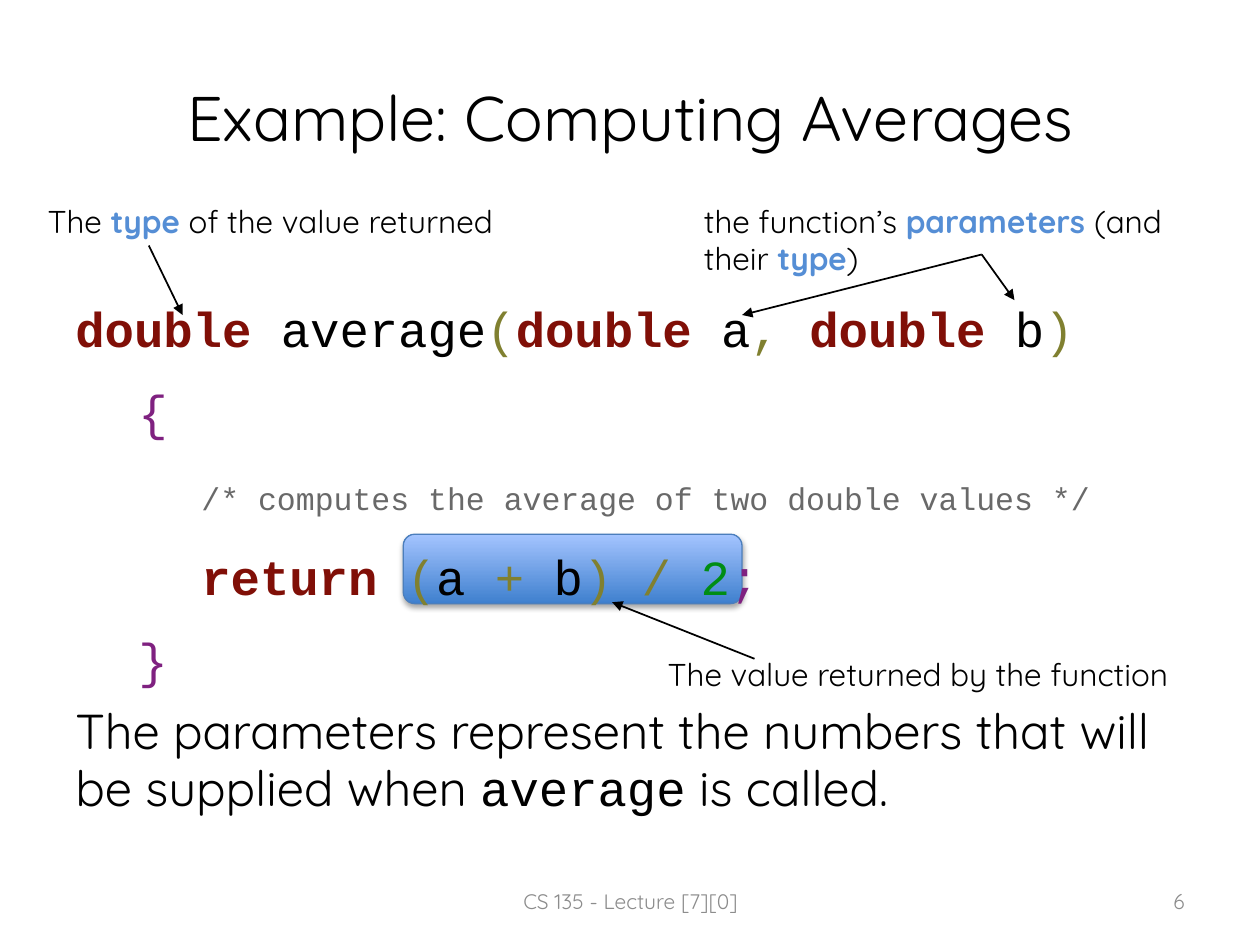
import pptx
import pptx.util
import pptx.oxml
import pptx.oxml.ns
import pptx.dml.color
import pptx.enum.text
import pptx.enum.shapes

Cm, Pt = pptx.util.Cm, pptx.util.Pt
RGB = pptx.dml.color.RGBColor
Align = pptx.enum.text.PP_ALIGN
Anchor = pptx.enum.text.MSO_ANCHOR
Fit = pptx.enum.text.MSO_AUTO_SIZE
Kind = pptx.enum.shapes.MSO_SHAPE
Line = pptx.enum.shapes.MSO_CONNECTOR
NS = pptx.oxml.ns.nsdecls("a")

BLACK = RGB(0x00, 0x00, 0x00)
RED = RGB(0x80, 0x0F, 0x07)
OLIVE = RGB(0x80, 0x80, 0x30)
PURPLE = RGB(0x7F, 0x21, 0x80)
GREEN = RGB(0x00, 0x8D, 0x14)
GREY = RGB(0x69, 0x69, 0x69)
PALE = RGB(0x8C, 0x8C, 0x8C)
BLUE = RGB(0x55, 0x8E, 0xD5)
EDGE = RGB(0x4B, 0x7E, 0xBC)
DARK = RGB(0x3F, 0x80, 0xCE)
LIGHT = RGB(0xA4, 0xC4, 0xFF)

SANS, MONO = "Quicksand", "Courier New"
BOLD = (RED, BLUE)  # colours that mark bold words


class Deck:
    def __init__(self):
        self.prs = pptx.Presentation()
        self.prs.slide_width, self.prs.slide_height = Cm(25.4), Cm(19.05)
        self.slide = self.prs.slides.add_slide(self.prs.slide_layouts[5])

    def run(self, para, text, color=BLACK, size=18, font=SANS):
        run = para.add_run()
        run.text = text
        run.font.name, run.font.size = font, Pt(size)
        run.font.color.rgb, run.font.bold = color, color in BOLD

    def title(self, text, x, y, w, h):
        box = self.slide.shapes.title
        box.left, box.top, box.width, box.height = map(Cm, (x, y, w, h))
        box.text_frame.vertical_anchor = Anchor.MIDDLE
        para = box.text_frame.paragraphs[0]
        para.alignment = Align.CENTER
        self.run(para, text, size=36)

    def frame(self, x, y, w, h, wrap=True):
        box = self.slide.shapes.add_textbox(*map(Cm, (x, y, w, h)))
        box.text_frame.word_wrap = wrap
        return box.text_frame

    def label(self, x, y, w, h, runs, wrap=True):
        frame = self.frame(x, y, w, h, wrap)
        frame.auto_size = Fit.SHAPE_TO_FIT_TEXT
        for text, color in runs:
            self.run(frame.paragraphs[0], text, color)

    def foot(self, x, w, text, align):
        frame = self.frame(x, 17.66, w, 1.01)
        frame.vertical_anchor = Anchor.MIDDLE
        frame.paragraphs[0].alignment = align
        self.run(frame.paragraphs[0], text, PALE, 12)

    def body(self, x, y, w, h, rows):
        frame = self.frame(x, y, w, h)
        for i, (depth, before, after, runs) in enumerate(rows):
            para = frame.add_paragraph() if i else frame.paragraphs[0]
            para.space_before, para.space_after = Pt(before), Pt(after)
            props = para._p.get_or_add_pPr()
            props.set("marL", str(Cm(1.27 * depth)))
            props.set("indent", "0")
            for text, color, size, font in runs:
                self.run(para, text, color, size, font)
        para.line_spacing = 0.96

    def panel(self, x, y, w, h):
        box = self.slide.shapes.add_shape(
            Kind.ROUNDED_RECTANGLE, *map(Cm, (x, y, w, h)))
        box.fill.gradient()
        box.fill.gradient_angle = 90
        for stop, color in zip(box.fill.gradient_stops, (DARK, LIGHT)):
            stop.color.rgb = color
        for stop, place in zip(box.fill.gradient_stops, (0, 1)):
            stop.position = place
        box.line.color.rgb, box.line.width = EDGE, Pt(0.75)
        box._element.spPr.append(pptx.oxml.parse_xml(
            f'<a:effectLst {NS}><a:outerShdw blurRad="{Pt(3.1)}" '
            f'dist="{Pt(1.8)}" dir="5400000" rotWithShape="0">'
            '<a:srgbClr val="000000"><a:alpha val="35000"/></a:srgbClr>'
            '</a:outerShdw></a:effectLst>'))

    def arrow(self, start, end):
        line = self.slide.shapes.add_connector(
            Line.STRAIGHT, *map(Cm, start + end))
        line.line.color.rgb, line.line.width = BLACK, Pt(1)
        line.line._get_or_add_ln().append(
            pptx.oxml.parse_xml(f'<a:tailEnd {NS} type="triangle"/>'))
        line._element.spPr.append(
            pptx.oxml.parse_xml(f'<a:effectLst {NS}/>'))


def code(*parts, size=28):
    return [(text, color, size, MONO) for text, color in parts]


def main():
    deck = Deck()
    deck.title("Example: Computing Averages", 1.27, 0.76, 22.86, 3.18)

    # Highlight behind the returned expression
    deck.panel(8.13, 10.77, 6.83, 1.4)

    # Code and closing sentence: depth, space before, space after, runs
    deck.body(1.27, 5.89, 22.86, 11.13, [
        (0, 5, 12, code(
            ("double", RED), (" average", BLACK), ("(", OLIVE),
            ("double", RED), (" a", BLACK), (", ", OLIVE),
            ("double", RED), (" b", BLACK), (")", OLIVE))),
        (1, 2, 12, code(("{", PURPLE))),
        (2, 10, 15, code(
            ("/* computes the average of two double values */", GREY),
            size=18)),
        (2, 2, 12, code(
            ("return ", RED), ("(", OLIVE), ("a ", BLACK), ("+", OLIVE),
            (" b", BLACK), (") / ", OLIVE), ("2", GREEN), (";", PURPLE))),
        (1, 2, 7, code(("}", PURPLE))),
        (0, 2, 12, [
            ("The parameters represent the numbers that will be supplied "
             "when ", BLACK, 28, SANS),
            ("average", BLACK, 28, MONO),
            (" is called.", BLACK, 28, SANS)]),
    ])

    # Remarks
    deck.label(0.71, 3.94, 9.93, 1.02, [
        ("The ", BLACK), ("type ", BLUE),
        ("of the value returned", BLACK)], wrap=False)
    deck.label(13.94, 3.94, 10.92, 1.8, [
        ("the function’s ", BLACK), ("parameters ", BLUE),
        ("(and their ", BLACK), ("type", BLUE), (")", BLACK)])
    deck.label(13.21, 13.08, 11.23, 1.02, [
        ("The value returned by the function", BLACK)], wrap=False)

    # Arrows from remarks to code
    fork = (19.79, 5.13)
    for start, end in (
            ((3, 4.95), (3.68, 6.35)),
            (fork, (20.45, 6.05)),
            (fork, (14.96, 6.35)),
            ((15.21, 13.28), (12.34, 12.14))):
        deck.arrow(start, end)

    # Footer
    deck.foot(8.69, 8.05, "CS 135 - Lecture [7][0]", Align.CENTER)
    deck.foot(18.21, 5.92, "6", Align.RIGHT)

    deck.prs.save("out.pptx")


if __name__ == "__main__":
    main()
